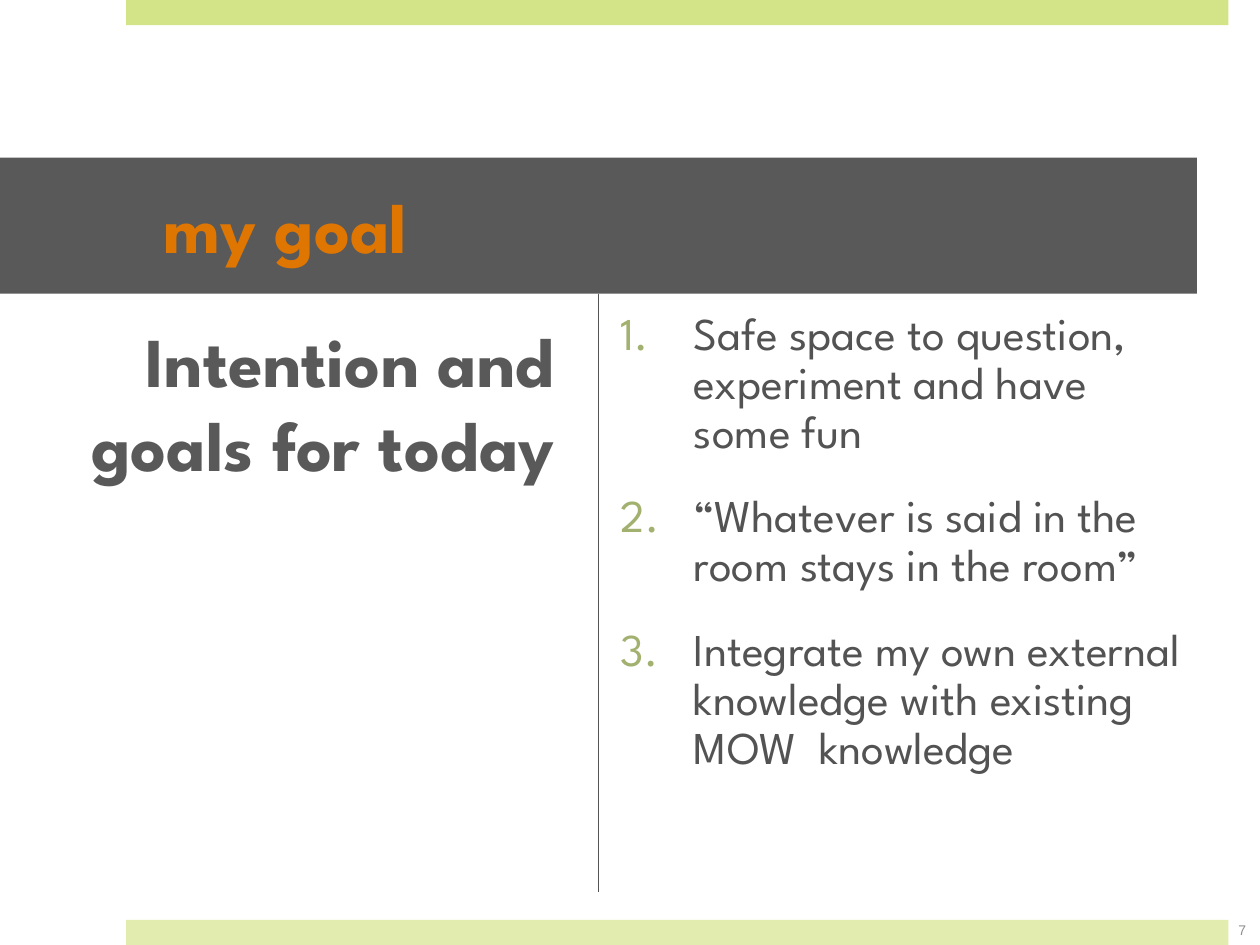
from lxml import etree
from pptx import Presentation
from pptx.dml.color import RGBColor
from pptx.enum.shapes import MSO_CONNECTOR, MSO_SHAPE
from pptx.enum.text import MSO_ANCHOR, MSO_AUTO_SIZE, PP_ALIGN
from pptx.oxml.ns import qn
from pptx.util import Pt

RECTANGLE = MSO_SHAPE.RECTANGLE
STRAIGHT = MSO_CONNECTOR.STRAIGHT
TOP, MIDDLE = MSO_ANCHOR.TOP, MSO_ANCHOR.MIDDLE
LEFT, CENTER, RIGHT = PP_ALIGN.LEFT, PP_ALIGN.CENTER, PP_ALIGN.RIGHT
NO_AUTOFIT = MSO_AUTO_SIZE.NONE
PX = 9144

THEME = {
    "font": "League Spartan", "number_font": "Arial",
    "heading_size": 40, "list_size": 26, "number_size": 8,
    "top_bar": "D3E388", "bottom_bar": "E2ECAF", "band": "595959",
    "title": "E07602", "heading": "595959", "text": "535353",
    "bullet": "A2B170", "page_number": "8F8F8F",
}


def place(shape, left, top, width, height):
    bounds = {"left": left, "top": top, "width": width, "height": height}
    for name, value in bounds.items():
        setattr(shape, name, value * PX)


def write(box, lines, anchor, align, font, size, color, bold=False, margins=(10, 5, 10, 5)):
    frame = box.text_frame
    frame_format = {"word_wrap": True, "auto_size": NO_AUTOFIT, "vertical_anchor": anchor}
    for side, margin in zip(("left", "top", "right", "bottom"), margins):
        frame_format[f"margin_{side}"] = margin * PX
    for name, value in frame_format.items():
        setattr(frame, name, value)
    font_format = {"name": font, "size": Pt(size), "bold": bold}
    for index, line in enumerate(lines):
        para = frame.add_paragraph() if index else frame.paragraphs[0]
        para.alignment = align
        span = para.add_run()
        span.text = line
        for name, value in font_format.items():
            setattr(span.font, name, value)
        span.font.color.rgb = RGBColor.from_string(color)
    return frame.paragraphs


deck = Presentation()
deck.slide_width, deck.slide_height = 1000 * PX, 750 * PX
page = deck.slides.add_slide(deck.slide_layouts[5])

for top, color in ((0, THEME["top_bar"]), (730, THEME["bottom_bar"])):
    bar = page.shapes.add_shape(RECTANGLE, 100 * PX, top * PX, 875 * PX, 20 * PX)
    bar.shadow.inherit = False
    bar.fill.solid()
    bar.fill.fore_color.rgb = RGBColor.from_string(color)
    bar.line.fill.background()

page_number = page.shapes.add_textbox(961 * PX, 718 * PX, 50 * PX, 40 * PX)
write(page_number, ["7"], MIDDLE, CENTER, THEME["number_font"],
      THEME["number_size"], THEME["page_number"])

title = page.shapes.title
place(title, 0, 125, 950, 108)
title.fill.solid()
title.fill.fore_color.rgb = RGBColor.from_string(THEME["band"])
write(title, ["my goal"], MIDDLE, LEFT, THEME["font"], THEME["heading_size"],
      THEME["title"], True, (130, 5, 30, 5))

heading = page.shapes.add_textbox(25 * PX, 247 * PX, 425 * PX, 495 * PX)
write(heading, ["Intention and goals for today"], TOP, RIGHT, THEME["font"],
      THEME["heading_size"], THEME["heading"], True)

goals = [
    "Safe space to question, experiment and have some fun",
    "“Whatever is said in the room stays in the room”",
    "Integrate my own external knowledge with existing MOW  knowledge",
]
goal_list = page.shapes.add_textbox(483 * PX, 242 * PX, 467 * PX, 495 * PX)
goal_paras = write(goal_list, goals, TOP, LEFT, THEME["font"], THEME["list_size"], THEME["text"])
for index, para in enumerate(goal_paras):
    properties = para._p.get_or_add_pPr()
    for name, value in {"marL": 58 * PX, "indent": -58 * PX}.items():
        properties.set(name, str(value))
    bullet_color = etree.SubElement(properties, qn("a:buClr"))
    etree.SubElement(bullet_color, qn("a:srgbClr"), val=THEME["bullet"])
    etree.SubElement(properties, qn("a:buFont"), typeface=THEME["font"])
    etree.SubElement(properties, qn("a:buAutoNum"), type="arabicPeriod")
    para.line_spacing = 0.9
    para.space_before = Pt(20 if index else 0)

divider = page.shapes.add_connector(STRAIGHT, 475 * PX, 233 * PX, 475 * PX, 708 * PX)
divider.begin_connect(title, 2)
divider.line.color.rgb = RGBColor.from_string(THEME["text"])
divider.line.width = Pt(0.75)
etree.SubElement(divider._element.spPr, qn("a:effectLst"))

deck.save("out.pptx")
